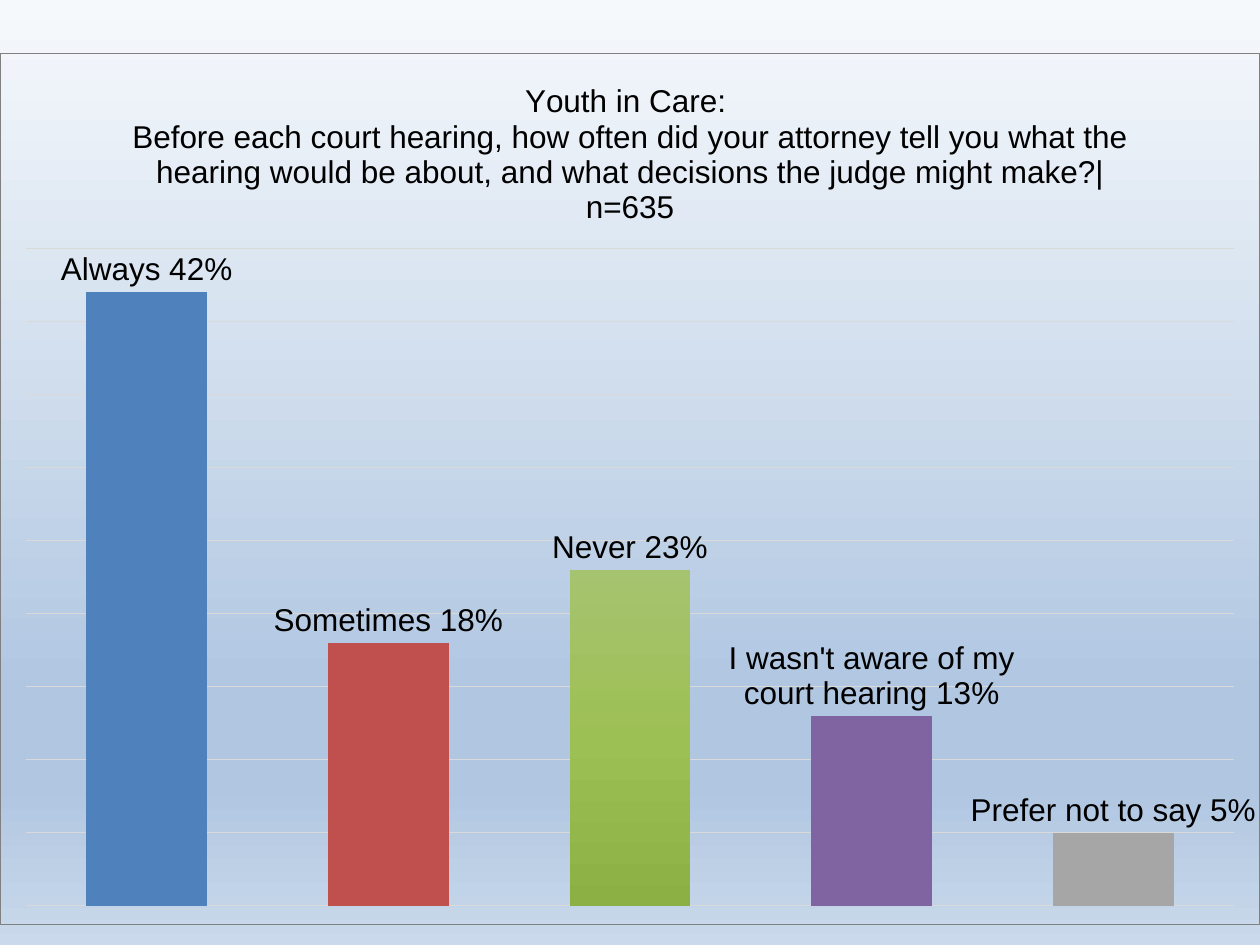
from lxml import etree
from pptx import Presentation
from pptx.chart.data import CategoryChartData as Data
from pptx.dml.color import RGBColor as RGB
from pptx.enum.chart import XL_CHART_TYPE as Kind, XL_LABEL_POSITION as Pos
from pptx.oxml import parse_xml
from pptx.oxml.ns import nsdecls, qn
from pptx.util import Inches, Pt

HUES = {
    "text": "000000", "soft": "404040", "grid": "D9D9D9", "edge": "808080",
    "blue": "4F81BD", "red": "C0504D", "violet": "8064A2", "gray": "A6A6A6",
}
SKY = [(0, "F6F9FC"), (74, "B0C6E1"), (83, "B0C6E1"), (100, "CAD9EB")]
TONES = [
    [(0, "688FC5"), (50, "4A80C3"), (100, "3B72B3")],
    [(0, "C76967"), (50, "C64B47"), (100, "B63C39")],
    [(0, "A6C36F"), (50, "9DC054"), (100, "8DB045")],
]
SHARES = {
    "Always": 42, "Sometimes": 18, "Never": 23,
    "I wasn't aware of my court hearing": 13, "Prefer not to say": 5,
}
POINTS = {0: "blue", 1: "red", 3: "violet", 4: "gray"}
TITLE = [
    "Youth in Care: ",
    "Before each court hearing, how often did your attorney tell you what the "
    "hearing would be about, and what decisions the judge might make?|n=635",
]


def hue(name):
    return RGB.from_string(HUES[name])


def shade(fill, root, stops):
    fill.gradient()
    fill.gradient_angle = 270
    items = root.find(".//" + qn("a:gsLst"))
    for old in list(items):
        items.remove(old)
    for pos, tone in stops:
        stop = etree.SubElement(items, qn("a:gs"), pos=str(pos * 1000))
        etree.SubElement(stop, qn("a:srgbClr"), val=tone)


def style(font, size, tone="text"):
    font.name, font.size, font.bold = "Arial", Pt(size), False
    font.color.rgb = hue(tone)


def place(area, **spots):
    old = area.find(qn("c:layout"))
    if old is not None:
        area.remove(old)
    rules = "".join(f'<c:{key} val="{val}"/>' for key, val in spots.items())
    area.insert(0, parse_xml(
        f"<c:layout {nsdecls('c')}><c:manualLayout>{rules}"
        "</c:manualLayout></c:layout>"))


def add_title(chart):
    frame = chart.chart_title.text_frame
    for i, text in enumerate(TITLE):
        para = frame.add_paragraph() if i else frame.paragraphs[0]
        para.text = text
        style(para.font, 18)
    chart.chart_title.include_in_layout = False


def set_axes(chart):
    chart.category_axis.visible = False
    axis = chart.value_axis
    axis.visible = False
    axis.minimum_scale, axis.maximum_scale, axis.major_unit = 0, 45, 5
    line = axis.major_gridlines.format.line
    line.color.rgb, line.width = hue("grid"), Pt(0.75)


def set_tags(bars, size, tone):
    tags = bars.data_labels
    tags.show_value = True
    tags.position = Pos.OUTSIDE_END
    style(tags.font, size, tone)
    return tags


def set_main(bars):
    for i, name in POINTS.items():
        fill = bars.points[i].format.fill
        fill.solid()
        fill.fore_color.rgb = hue(name)
    tags = set_tags(bars, 18, "text")
    tags.show_category_name = True
    tags.number_format, tags.number_format_is_linked = "0\\%;", False
    gap = etree.SubElement(tags._element, qn("c:separator"))
    gap.text = " "


def set_bars(plot):
    plot.gap_width, plot.overlap = 100, -24
    plot.vary_by_categories = False
    for bars, stops in zip(plot.series, TONES):
        shade(bars.format.fill, bars._element, stops)
        if any(bars.values):
            set_main(bars)
        else:
            set_tags(bars, 9, "soft")
            bars._element.remove(bars._element.find(qn("c:val")))


def set_frame(chart):
    tone = HUES["edge"]
    chart._chartSpace.find(qn("c:chart")).addnext(parse_xml(
        f'<c:spPr {nsdecls("c", "a")}><a:noFill/><a:ln w="9525"><a:solidFill>'
        f'<a:srgbClr val="{tone}"/></a:solidFill></a:ln></c:spPr>'))


def add_chart(slide):
    data = Data()
    data.categories = list(SHARES)
    for name, vals in (("Series 1", []), ("Series 2", []),
                       ("Series 3", list(SHARES.values()))):
        data.add_series(name, vals)
    chart = slide.shapes.add_chart(
        Kind.COLUMN_CLUSTERED, Inches(0), Inches(0.42),
        Inches(10), Inches(6.92), data).chart
    style(chart.font, 10)
    chart.has_legend = False
    set_frame(chart)
    add_title(chart)
    set_axes(chart)
    set_bars(chart.plots[0])
    place(chart._chartSpace.find(".//" + qn("c:plotArea")),
          layoutTarget="inner", xMode="edge", yMode="edge",
          x=0.02, y=0.224, w=0.96, h=0.755)


def main():
    deck = Presentation()
    deck.slide_width, deck.slide_height = Inches(10), Inches(7.5)
    slide = deck.slides.add_slide(deck.slide_layouts[6])
    shade(slide.background.fill, slide._element, SKY)
    add_chart(slide)
    deck.save("out.pptx")


main()
